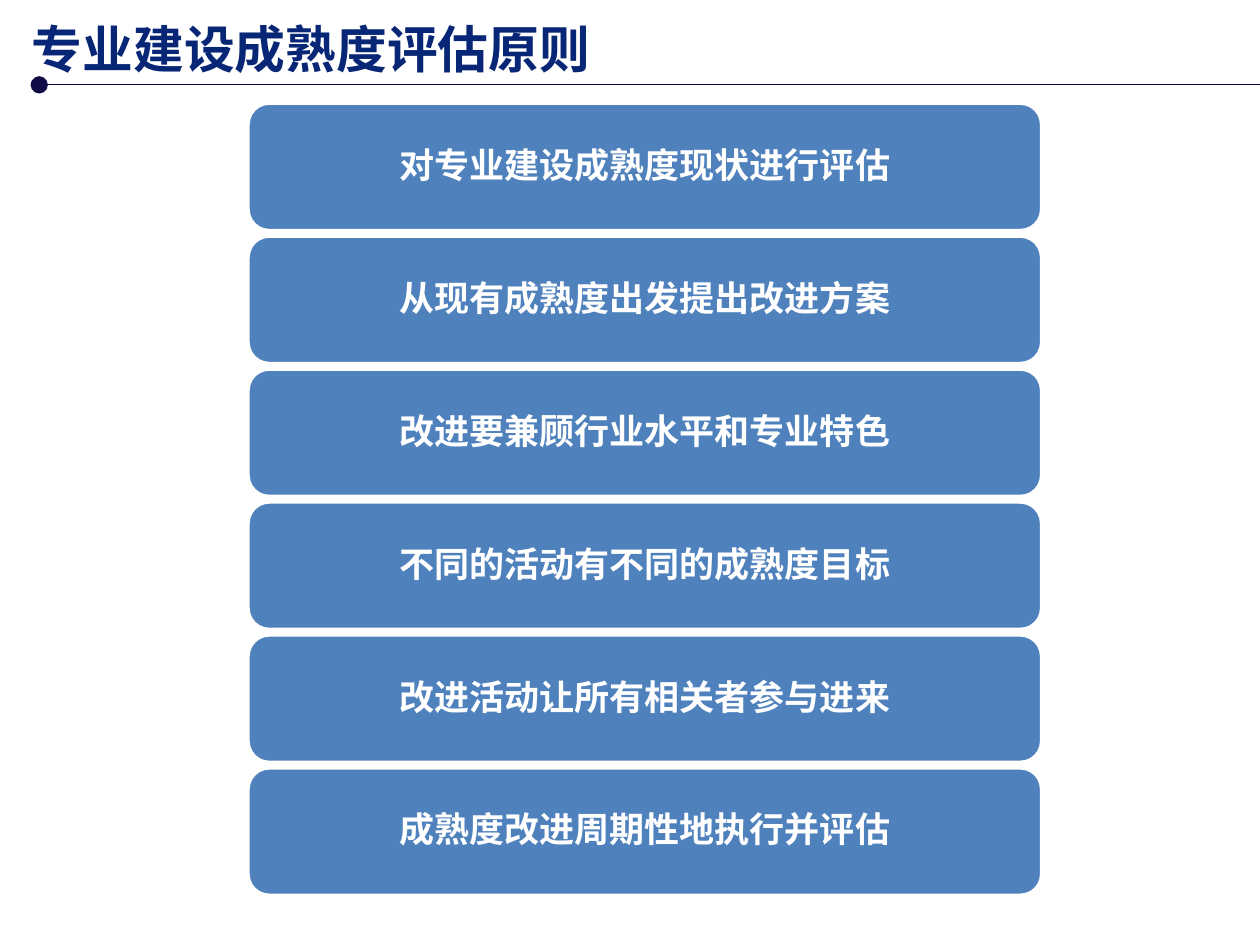
from lxml import etree
from pptx import Presentation
from pptx.dml.color import RGBColor
from pptx.enum.shapes import MSO_CONNECTOR, MSO_SHAPE
from pptx.enum.text import MSO_ANCHOR, MSO_AUTO_SIZE, PP_ALIGN
from pptx.oxml.ns import qn
from pptx.util import Cm, Pt

ROUNDED = MSO_SHAPE.ROUNDED_RECTANGLE
STRAIGHT = MSO_CONNECTOR.STRAIGHT
MIDDLE = MSO_ANCHOR.MIDDLE
FIXED_SIZE = MSO_AUTO_SIZE.NONE
LEFT = PP_ALIGN.LEFT
CENTER = PP_ALIGN.CENTER

NAVY = RGBColor(0x07, 0x26, 0x76)
INDIGO = RGBColor(0x10, 0x0A, 0x46)
BLUE = RGBColor(0x4F, 0x81, 0xBD)
WHITE = RGBColor(0xFF, 0xFF, 0xFF)

TITLE = "专业建设成熟度评估原则"
PRINCIPLES = [
    "对专业建设成熟度现状进行评估",
    "从现有成熟度出发提出改进方案",
    "改进要兼顾行业水平和专业特色",
    "不同的活动有不同的成熟度目标",
    "改进活动让所有相关者参与进来",
    "成熟度改进周期性地执行并评估",
]
FIRST_TOP = 2.08
PITCH = 2.68


class PrinciplesPage:
    title_font = "Noto Sans CJK SC"
    label_font = "DejaVu Sans"

    def __init__(self, deck):
        self.page = deck.slides.add_slide(deck.slide_layouts[5])

    def set_text(self, frame, text, font_name, size, color, align, margins):
        frame.word_wrap = True
        frame.auto_size = FIXED_SIZE
        frame.vertical_anchor = MIDDLE
        frame.margin_left = frame.margin_right = Cm(margins[0])
        frame.margin_top = frame.margin_bottom = Cm(margins[1])
        frame.text = text
        paragraph = frame.paragraphs[0]
        paragraph.alignment = align
        font = paragraph.font
        font.name = font_name
        font.size = Pt(size)
        font.bold = True
        font.color.rgb = color
        return paragraph

    def title(self, text, left, top, width, height):
        box = self.page.shapes.title
        box.left, box.top = Cm(left), Cm(top)
        box.width, box.height = Cm(width), Cm(height)
        paragraph = self.set_text(
            box.text_frame, text, self.title_font, 29, NAVY, LEFT, (0, 0)
        )
        east_asian = etree.Element(qn("a:ea"), typeface=self.title_font)
        latin = paragraph.font._element.find(qn("a:latin"))
        latin.addnext(east_asian)

    def rule(self, left, top, right):
        line = self.page.shapes.add_connector(
            STRAIGHT, Cm(left), Cm(top), Cm(right), Cm(top)
        )
        line.line.color.rgb = INDIGO
        line.line.width = Pt(0.5)
        outline = line.line._get_or_add_ln()
        etree.SubElement(outline, qn("a:headEnd"), type="oval", w="lg", len="lg")
        etree.SubElement(line._element.spPr, qn("a:effectLst"))

    def principle(self, text, left, top, width, height):
        box = self.page.shapes.add_shape(
            ROUNDED, Cm(left), Cm(top), Cm(width), Cm(height)
        )
        box.shadow.inherit = False
        box.fill.solid()
        box.fill.fore_color.rgb = BLUE
        box.line.color.rgb = WHITE
        box.line.width = Pt(2)
        paragraph = self.set_text(
            box.text_frame, text, self.label_font, 20, WHITE, CENTER, (0.2, 0.1)
        )
        paragraph.line_spacing = 0.9


def main():
    deck = Presentation()
    deck.slide_width, deck.slide_height = Cm(25.4), Cm(19.05)
    page = PrinciplesPage(deck)
    page.title(TITLE, 0.64, 0.36, 19.74, 1.24)
    page.rule(0.79, 1.71, 25.62)
    for index, text in enumerate(PRINCIPLES):
        page.principle(text, 5, FIRST_TOP + index * PITCH, 16, 2.57)
    deck.save("out.pptx")


if __name__ == "__main__":
    main()
